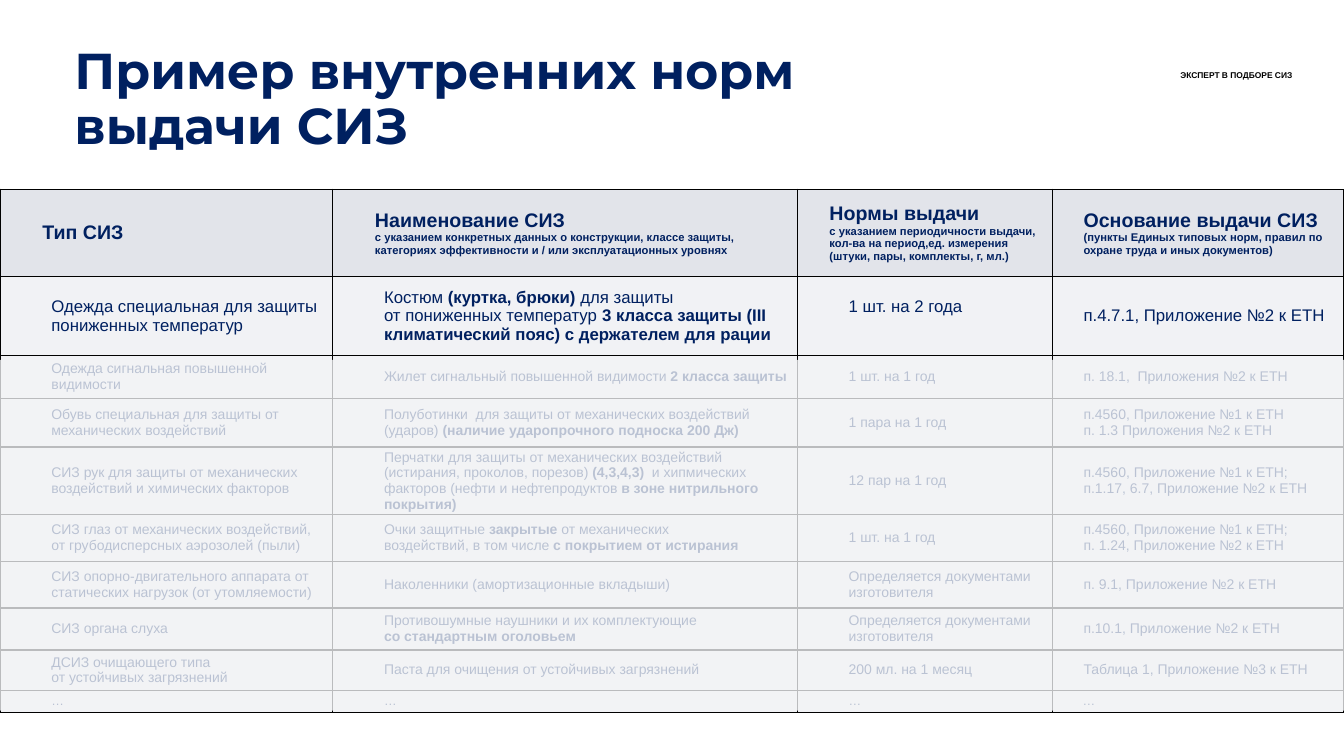
from copy import deepcopy

from lxml.etree import SubElement
from pptx import Presentation
from pptx.dml.color import RGBColor
from pptx.enum.shapes import MSO_SHAPE
from pptx.enum.text import MSO_ANCHOR, MSO_AUTO_SIZE, PP_ALIGN
from pptx.oxml.ns import qn
from pptx.util import Pt

NAVY = "002060"
COLUMN_WIDTHS = [237.6, 331.9, 182.2, 208.3]
ROW_HEIGHTS = [62.4, 56.2, 31, 34.6, 47.9, 33.4, 33.4, 30, 28.8, 15.8]
BODY_SIZES = [12] + [10] * 7 + [9]
HEADER_INDENTS = [28.8, 28.8, 21.6, 20.9]
BODY_INDENTS = [36, 36, 36, 20.9]
HEADERS = [
    "Тип СИЗ",
    "Наименование СИЗ|с указанием конкретных данных о конструкции, классе защиты, "
    "категориях эффективности и / или эксплуатационных уровнях",
    "Нормы выдачи|с указанием периодичности выдачи, кол-ва на период,ед. измерения "
    "(штуки, пары, комплекты, г, мл.)",
    "Основание выдачи СИЗ|(пункты Единых типовых норм, правил по охране труда и иных документов)",
]
NORMS = [
    ["Одежда специальная для защиты\nпониженных температур",
     "Костюм *(куртка, брюки)* для защиты\nот пониженных температур "
     "*3 класса защиты (III климатический пояс) с держателем для рации*",
     "1 шт. на 2 года", "п.4.7.1, Приложение №2 к ЕТН"],
    ["Одежда сигнальная повышенной видимости",
     "Жилет сигнальный повышенной видимости *2 класса защиты*",
     "1 шт. на 1 год", "п. 18.1,  Приложения №2 к ЕТН"],
    ["Обувь специальная для защиты от механических воздействий",
     "Полуботинки  для защиты от механических воздействий\n(ударов) "
     "*(наличие ударопрочного подноска 200 Дж)*",
     "1 пара на 1 год", "п.4560, Приложение №1 к ЕТН|п. 1.3 Приложения №2 к ЕТН"],
    ["СИЗ рук для защиты от механических воздействий и химических факторов",
     "Перчатки для защиты от механических воздействий (истирания, проколов, порезов) "
     "*(4,3,4,3)  *и хипмических факторов (нефти и нефтепродуктов *в зоне нитрильного покрытия)*",
     "12 пар на 1 год", "п.4560, Приложение №1 к ЕТН;|п.1.17, 6.7, Приложение №2 к ЕТН"],
    ["СИЗ глаз от механических воздействий,\nот грубодисперсных аэрозолей (пыли)",
     "Очки защитные *закрытые* от механических\nвоздействий, в том числе *с покрытием от истирания*",
     "1 шт. на 1 год", "п.4560, Приложение №1 к ЕТН;|п. 1.24, Приложение №2 к ЕТН"],
    ["СИЗ опорно-двигательного аппарата от статических нагрузок (от утомляемости)",
     "Наколенники (амортизационные вкладыши)",
     "Определяется документами изготовителя", "п. 9.1, Приложение №2 к ЕТН"],
    ["СИЗ органа слуха",
     "Противошумные наушники и их комплектующие\n*со стандартным оголовьем*",
     "Определяется документами изготовителя", "п.10.1, Приложение №2 к ЕТН"],
    ["ДСИЗ очищающего типа\nот устойчивых загрязнений",
     "Паста для очищения от устойчивых загрязнений",
     "200 мл. на 1 месяц", "Таблица 1, Приложение №3 к ЕТН"],
    ["…"] * 4,
]


def colour(value):
    """Turn a hex string into a colour."""
    return RGBColor.from_string(value)


def style(span, size, bold, name="Arial", value=NAVY):
    """Format one run."""
    span.font.size, span.font.bold, span.font.name = Pt(size), bold, name
    span.font.color.rgb = colour(value)


def write(para, text, size, bold):
    """Write text whose starred parts are bold and whose newlines are line breaks."""
    for part_number, part in enumerate(text.split("*")):
        for line_number, line in enumerate(part.split("\n")):
            if line_number:
                para.add_line_break()
            if line:
                span = para.add_run()
                span.text = line
                style(span, size, bold or part_number % 2 == 1)
    for line_break in para._p.findall(qn("a:br")):
        line_break.append(deepcopy(para.runs[0]._r.rPr))


def outline(cell):
    """Draw a thin black border on every side of a cell."""
    for side in ("lnL", "lnR", "lnT", "lnB"):
        line = SubElement(cell._tc.get_or_add_tcPr(), qn(f"a:{side}"), w=str(Pt(1)))
        SubElement(SubElement(line, qn("a:solidFill")), qn("a:srgbClr"), val="000000")


def fill_cell(cell, text, sizes, bold, indent, margins, back):
    """Format a cell and write its paragraphs, parted by bars."""
    outline(cell)
    cell.fill.solid()
    cell.fill.fore_color.rgb = colour(back)
    cell.vertical_anchor = MSO_ANCHOR.MIDDLE
    cell.margin_left = cell.margin_right = Pt(margins[0])
    cell.margin_top = cell.margin_bottom = Pt(margins[1])
    for number, text_part in enumerate(text.split("|")):
        para = cell.text_frame.paragraphs[0] if number == 0 else cell.text_frame.add_paragraph()
        properties = para._p.get_or_add_pPr()
        properties.set("marL", str(Pt(indent)))
        properties.set("indent", "0")
        write(para, text_part, sizes[number], bold)


def add_norms_table(page, left, top):
    """Add the table of issue norms."""
    frame = page.shapes.add_table(len(ROW_HEIGHTS), len(COLUMN_WIDTHS), Pt(left), Pt(top),
                                  Pt(sum(COLUMN_WIDTHS)), Pt(sum(ROW_HEIGHTS)))
    table = frame.table
    table.first_row = table.horz_banding = False
    for column, width in zip(table.columns, COLUMN_WIDTHS):
        column.width = Pt(width)
    for row, height in zip(table.rows, ROW_HEIGHTS):
        row.height = Pt(height)
    for column, text in enumerate(HEADERS):
        fill_cell(table.cell(0, column), text, [14, 8], True,
                  HEADER_INDENTS[column], (1.44, 2.88), "E2E4EA")
    for row, (texts, size) in enumerate(zip(NORMS, BODY_SIZES), 1):
        for column, text in enumerate(texts):
            margins = (1.44, 2.88) if column == 3 and size > 9 else (0.72, 0)
            fill_cell(table.cell(row, column), text, [size, size], False,
                      BODY_INDENTS[column], margins, "F1F2F5")
    table.cell(1, 2).margin_bottom = Pt(14)


def add_title(page, left, top, width, height):
    """Place and format the slide title."""
    box = page.shapes.title
    box.left, box.top, box.width, box.height = Pt(left), Pt(top), Pt(width), Pt(height)
    frame = box.text_frame
    frame.text = "Пример внутренних норм выдачи СИЗ"
    frame.word_wrap = True
    frame.auto_size = MSO_AUTO_SIZE.NONE
    frame.vertical_anchor = MSO_ANCHOR.TOP
    para = frame.paragraphs[0]
    para.alignment = PP_ALIGN.LEFT
    para.line_spacing = Pt(39)
    style(para.runs[0], 36, True, "Montserrat")


def add_tagline(page, left, top, width, height):
    """Add the small line at the top right."""
    frame = page.shapes.add_textbox(Pt(left), Pt(top), Pt(width), Pt(height)).text_frame
    frame.word_wrap = True
    frame.text = "ЭКСПЕРТ В ПОДБОРЕ СИЗ"
    style(frame.paragraphs[0].runs[0], 6, True, value="000000")


def add_veil(page, left, top, width, height):
    """Dim the lower rows with a translucent rectangle."""
    veil = page.shapes.add_shape(MSO_SHAPE.RECTANGLE, Pt(left), Pt(top), Pt(width), Pt(height))
    veil.shadow.inherit = False
    veil.line.fill.background()
    veil.fill.solid()
    veil.fill.fore_color.rgb = colour("F3F4F6")
    tint = veil._element.spPr.find(qn("a:solidFill")).find(qn("a:srgbClr"))
    SubElement(tint, qn("a:alpha"), val="77000")


def main():
    """Build and save the deck."""
    deck = Presentation()
    deck.slide_width, deck.slide_height = Pt(960), Pt(540)
    page = deck.slides.add_slide(deck.slide_layouts[5])
    add_tagline(page, 836, 46.8, 104.4, 14.4)
    add_norms_table(page, 0, 135.2)
    add_title(page, 46, 28.8, 608.4, 80.6)
    add_veil(page, 0, 257, 960, 250.6)
    deck.save("out.pptx")


if __name__ == "__main__":
    main()
